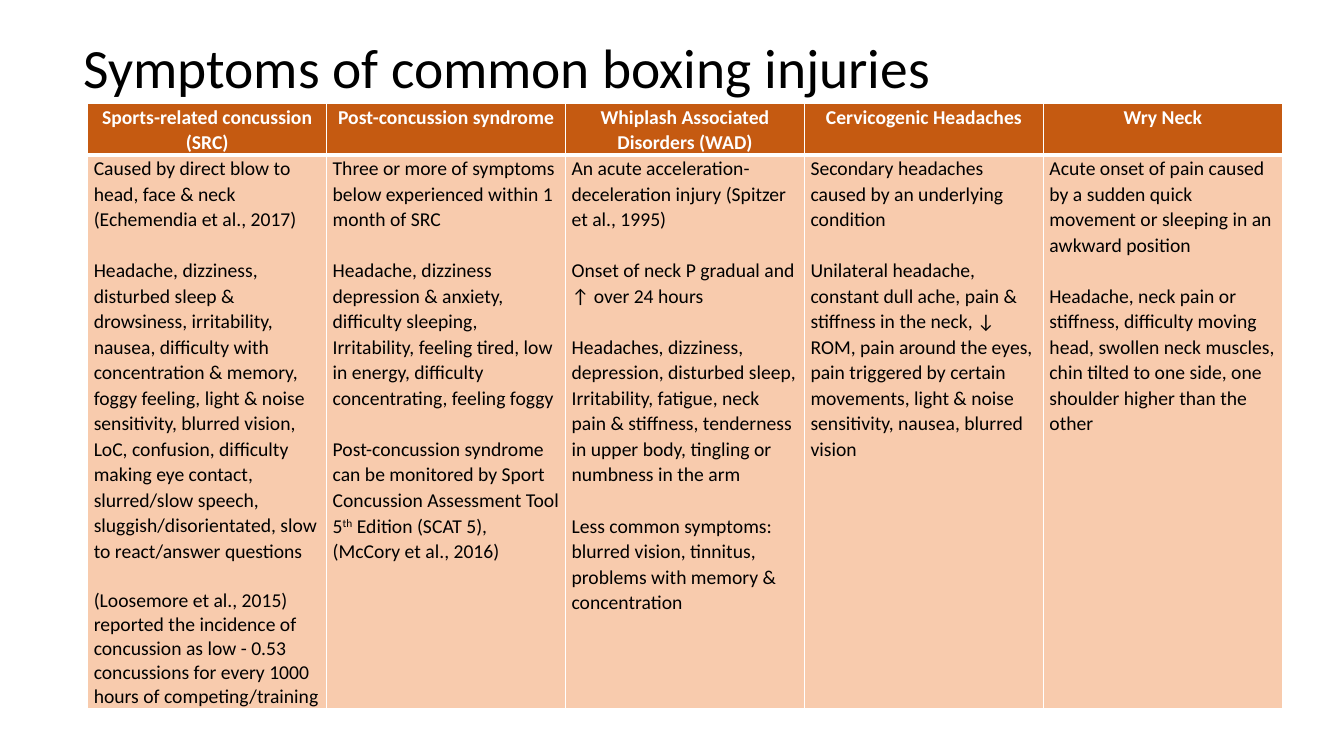
from lxml import etree
from pptx import Presentation
from pptx.dml.color import RGBColor
from pptx.enum.text import MSO_ANCHOR, MSO_AUTO_SIZE, PP_ALIGN
from pptx.oxml.ns import qn
from pptx.util import Inches, Pt

CENTER, LEFT = PP_ALIGN.CENTER, PP_ALIGN.LEFT
MIDDLE, TOP = MSO_ANCHOR.MIDDLE, MSO_ANCHOR.TOP
NO_FIT = MSO_AUTO_SIZE.NONE

COLORS = {"text": "000000", "white": "FFFFFF", "head": "C55A11", "body": "F8CBAD"}
SPACING = 1.07
GAP = 18.3  # one line of 14 pt text

# Each column: heading lines, then blocks of paragraphs; ^ marks superscript
COLUMNS = [
    (["Sports-related concussion", "(SRC)"], [
        ["Caused by direct blow to head, face & neck (Echemendia et al., 2017)"],
        ["Headache, dizziness, disturbed sleep & drowsiness, irritability, nausea, "
         "difficulty with concentration & memory, foggy feeling, light & noise "
         "sensitivity, blurred vision,",
         "LoC, confusion, difficulty making eye contact, slurred/slow speech, "
         "sluggish/disorientated, slow to react/answer questions"],
        ["(Loosemore et al., 2015) reported the incidence of concussion as low - 0.53 "
         "concussions for every 1000 hours of competing/training"],
    ]),
    (["Post-concussion syndrome"], [
        ["Three or more of symptoms below experienced within 1 month of SRC"],
        ["Headache, dizziness",
         "depression & anxiety, difficulty sleeping, Irritability, feeling tired, "
         "low in energy, difficulty concentrating, feeling foggy"],
        ["Post-concussion syndrome can be monitored by Sport Concussion Assessment "
         "Tool 5^th^ Edition (SCAT 5), (McCory et al., 2016)"],
    ]),
    (["Whiplash Associated Disorders (WAD)"], [
        ["An acute acceleration-deceleration injury (Spitzer et al., 1995)"],
        ["Onset of neck P gradual and ↑ over 24 hours"],
        ["Headaches, dizziness, depression, disturbed sleep,",
         "Irritability, fatigue, neck pain & stiffness, tenderness in upper body, "
         "tingling or numbness in the arm"],
        ["Less common symptoms: blurred vision, tinnitus, problems with memory & "
         "concentration"],
    ]),
    (["Cervicogenic Headaches"], [
        ["Secondary headaches caused by an underlying condition"],
        ["Unilateral headache, constant dull ache, pain & stiffness in the neck, "
         "↓ ROM, pain around the eyes,",
         "pain triggered by certain movements, light & noise sensitivity, nausea, "
         "blurred vision"],
    ]),
    (["Wry Neck"], [
        ["Acute onset of pain caused by a sudden quick movement or sleeping in an "
         "awkward position"],
        ["Headache, neck pain or stiffness, difficulty moving head, swollen neck "
         "muscles, chin tilted to one side, one shoulder higher than the other"],
    ]),
]


class Deck:
    font = "Calibri"

    def __init__(self):
        self.prs = Presentation()
        self.prs.slide_width, self.prs.slide_height = Inches(13.33), Inches(7.5)
        self.slide = self.prs.slides.add_slide(self.prs.slide_layouts[5])

    def add_text(self, para, text, size, color, bold=False):
        for i, part in enumerate(text.split("^")):
            run = para.add_run()
            run.text = part
            run.font.name, run.font.size, run.font.bold = self.font, Pt(size), bold
            run.font.color.rgb = RGBColor.from_string(COLORS[color])
            if i % 2:
                run.font._element.set("baseline", "30000")

    def title(self, text, left, top, width, height):
        box = self.slide.shapes.title
        box.left, box.top = Inches(left), Inches(top)
        box.width, box.height = Inches(width), Inches(height)
        frame = box.text_frame
        frame.auto_size, frame.word_wrap = NO_FIT, True
        frame.vertical_anchor = MIDDLE
        para = frame.paragraphs[0]
        para.alignment, para.line_spacing = LEFT, 0.9
        self.add_text(para, text, 39.6, "text")

    def table(self, left, top, widths, heights):
        shape = self.slide.shapes.add_table(
            len(heights), len(widths), Inches(left), Inches(top),
            Inches(sum(widths)), Inches(sum(heights)))
        grid = shape.table
        for col, width in zip(grid.columns, widths):
            col.width = Inches(width)
        for row, height in zip(grid.rows, heights):
            row.height = Inches(height)
        return grid

    def cell(self, cell, blocks, fill, color, align, edges, bold=False):
        cell.margin_left = cell.margin_right = Inches(0.06)
        cell.margin_top = cell.margin_bottom = 0
        cell.vertical_anchor = TOP
        self.border(cell, edges)
        cell.fill.solid()
        cell.fill.fore_color.rgb = RGBColor.from_string(COLORS[fill])
        para = None
        for block in blocks:
            for i, text in enumerate(block):
                first = para is None
                para = cell.text_frame.paragraphs[0] if first else cell.text_frame.add_paragraph()
                para.alignment, para.line_spacing = align, SPACING
                if i == 0 and not first:
                    para.space_before = Pt(GAP)
                self.add_text(para, text, 14, color, bold)

    def border(self, cell, edges):
        props = cell._tc.get_or_add_tcPr()
        for side, width in edges.items():
            line = etree.SubElement(props, qn(f"a:ln{side}"), w=str(Pt(width)))
            solid = etree.SubElement(line, qn("a:solidFill"))
            etree.SubElement(solid, qn("a:srgbClr"), val=COLORS["white"])


def main():
    deck = Deck()
    deck.title("Symptoms of common boxing injuries", 0.73, 0.41, 11.5, 0.58)

    # Symptom table: one column per injury
    grid = deck.table(0.87, 1.03, [2.37] * len(COLUMNS), [0.51, 5.47])
    for col, (head, blocks) in enumerate(COLUMNS):
        deck.cell(grid.cell(0, col), [head], "head", "white", CENTER,
                  {"L": 1, "R": 1, "T": 1, "B": 3}, bold=True)
        deck.cell(grid.cell(1, col), blocks, "body", "text", LEFT,
                  {"L": 1, "R": 1, "T": 3, "B": 1})

    # The closing note on incidence is set single-spaced
    note = grid.cell(1, 0).text_frame.paragraphs[-1]
    note.line_spacing = 1.0

    deck.prs.save("out.pptx")


if __name__ == "__main__":
    main()
